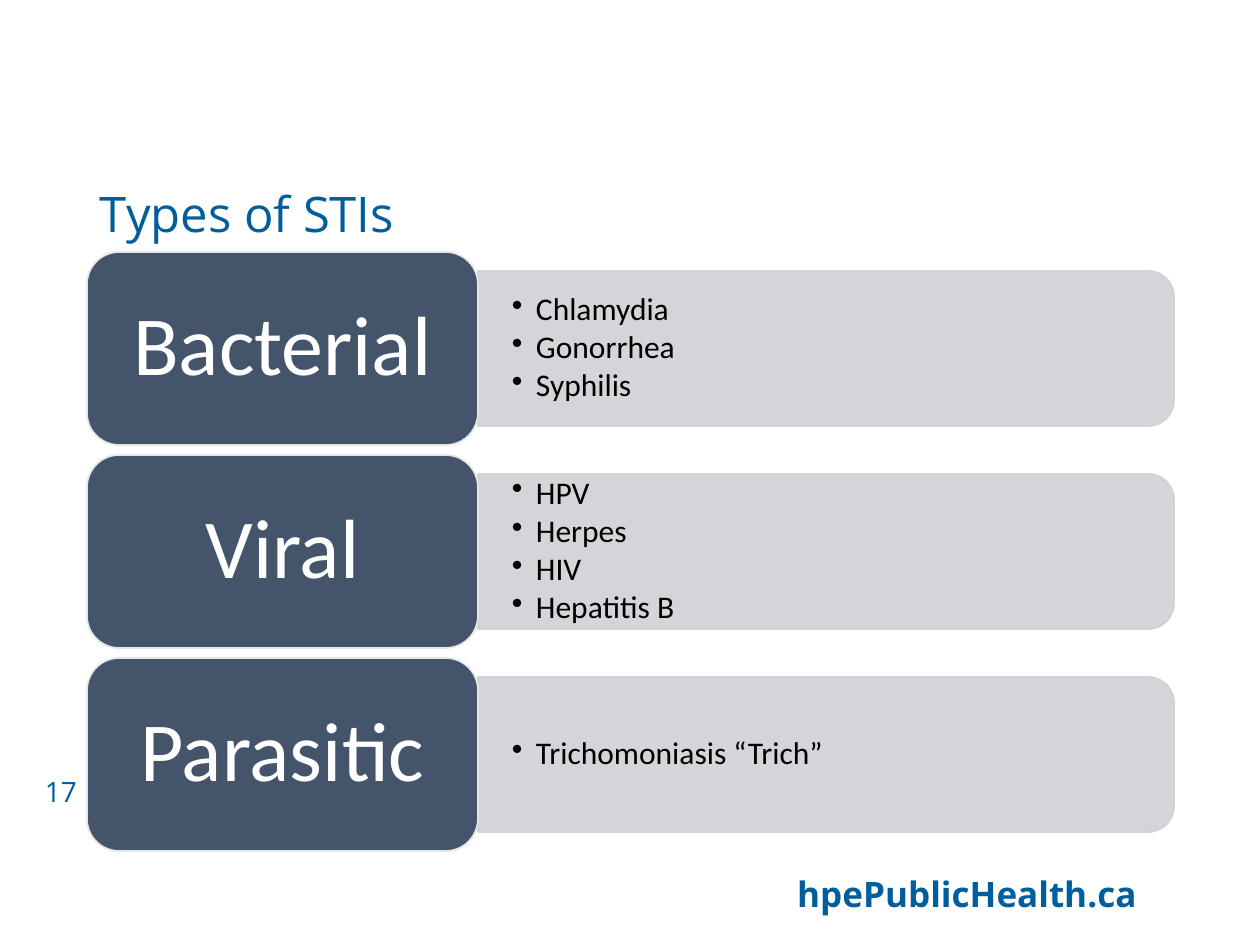
import pptx
import pptx.util
import pptx.dml.color
import pptx.enum.shapes
import pptx.enum.text
import pptx.oxml.ns
import lxml.etree

PX = 914400 / 126
COLORS = {"blue": "005E9C", "slate": "44546A", "edge": "E7E6E6",
          "panel": "CFD1D4", "black": "000000", "white": "FFFFFF"}
GROUPS = [
    ("Bacterial", ["Chlamydia", "Gonorrhea", "Syphilis"]),
    ("Viral", ["HPV", "Herpes", "HIV", "Hepatitis B"]),
    ("Parasitic", ["Trichomoniasis “Trich”"]),
]
LEFT, TOP, PITCH = 87, 252, 203
LABEL_W, LABEL_H = 391, 193
PANEL_W, PANEL_H = 696, 155
ALIGN = pptx.enum.text.PP_ALIGN
ANCHOR = pptx.enum.text.MSO_ANCHOR
SHAPE = pptx.enum.shapes.MSO_SHAPE


def px(n):
    return pptx.util.Emu(round(n * PX))


def rgb(name):
    return pptx.dml.color.RGBColor.from_string(COLORS[name])


def set_text(sp, lines, font, size, color, align=ALIGN.LEFT, anchor=ANCHOR.TOP,
             inset=(13, 6), spacing=None, after=0, bold=False, bullets=False):
    tf = sp.text_frame
    tf.word_wrap = True
    tf.vertical_anchor = anchor
    tf.margin_left = tf.margin_right = px(inset[0])
    tf.margin_top = tf.margin_bottom = px(inset[1])
    tf.text = "\n".join(lines)
    for p in tf.paragraphs:
        p.alignment = align
        p.line_spacing = spacing
        p.space_after = pptx.util.Pt(after)
        if bullets:
            add_bullet(p)
        for r in p.runs:
            r.font.name = font
            r.font.size = pptx.util.Pt(size)
            r.font.bold = bold
            r.font.color.rgb = rgb(color)


def add_bullet(p):
    pPr = p._p.get_or_add_pPr()
    pPr.set("marL", str(px(24)))
    pPr.set("indent", str(-px(24)))
    bu = lxml.etree.SubElement(pPr, pptx.oxml.ns.qn("a:buChar"))
    bu.set("char", "•")


def add_text(s, x, y, w, h, lines, *args, **kwargs):
    sp = s.shapes.add_textbox(px(x), px(y), px(w), px(h))
    set_text(sp, lines, *args, **kwargs)


def add_box(s, kind, x, y, w, h, fill, line):
    sp = s.shapes.add_shape(kind, px(x), px(y), px(w), px(h))
    sp.shadow.inherit = False
    sp.fill.solid()
    sp.fill.fore_color.rgb = rgb(fill)
    sp.line.color.rgb = rgb(line)
    sp.line.width = pptx.util.Pt(1)
    return sp


def add_panel(s, x, y, items):
    left = x + (PANEL_W - PANEL_H) / 2
    top = y - (PANEL_W - PANEL_H) / 2
    sp = add_box(s, SHAPE.ROUND_2_SAME_RECTANGLE, left, top, PANEL_H, PANEL_W,
                 "panel", "panel")
    sp.rotation = 90
    for clr in sp._element.spPr.iter(pptx.oxml.ns.qn("a:srgbClr")):
        alpha = lxml.etree.SubElement(clr, pptx.oxml.ns.qn("a:alpha"))
        alpha.set("val", "90000")
    add_text(s, x, y, PANEL_W - 8, PANEL_H, items, "Calibri", 18, "black",
             anchor=ANCHOR.MIDDLE, inset=(34, 0), spacing=0.9, after=2.3,
             bullets=True)


def add_label(s, x, y, text):
    sp = add_box(s, SHAPE.ROUNDED_RECTANGLE, x, y, LABEL_W, LABEL_H, "slate", "edge")
    set_text(sp, [text], "Calibri", 48, "white", align=ALIGN.CENTER,
             anchor=ANCHOR.MIDDLE, inset=(34, 22), spacing=0.9)


def main():
    prs = pptx.Presentation()
    prs.slide_width, prs.slide_height = px(1260), px(945)
    s = prs.slides.add_slide(prs.slide_layouts[6])
    add_text(s, 742, 869, 450, 50, ["hpePublicHealth.ca"], "Open Sans", 20, "blue",
             align=ALIGN.CENTER, anchor=ANCHOR.MIDDLE, bold=True)
    add_text(s, 32, 769, 284, 50, ["17"], "Open Sans", 16, "blue")
    add_text(s, LEFT, 184, 553, 68, ["Types of STIs"], "Open Sans", 28, "blue",
             spacing=0.9)
    for i, (label, items) in enumerate(GROUPS):
        y = TOP + i * PITCH
        add_panel(s, LEFT + LABEL_W, y + (LABEL_H - PANEL_H) / 2, items)
        add_label(s, LEFT, y, label)
    prs.save("out.pptx")


if __name__ == "__main__":
    main()
